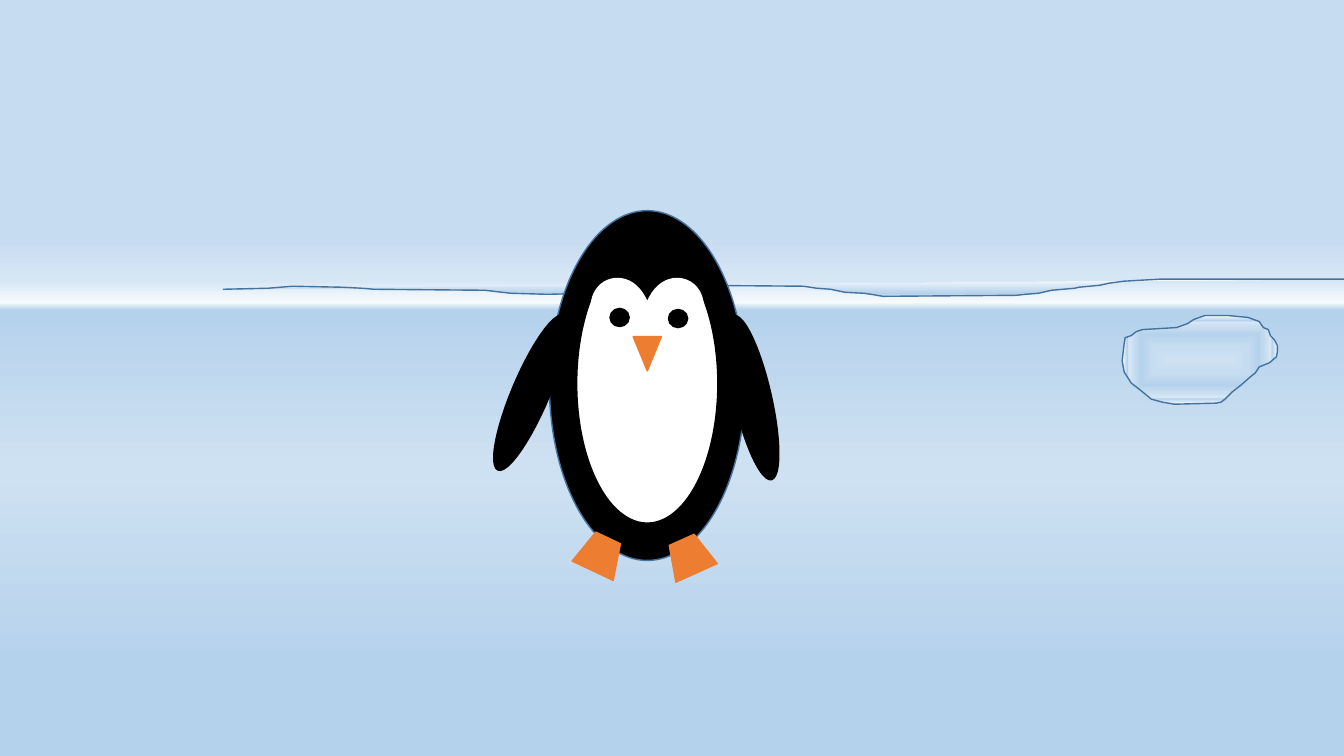
from lxml.etree import SubElement as Sub
from pptx import Presentation
from pptx.dml.color import RGBColor as RGB
from pptx.enum.shapes import MSO_SHAPE as Shp
from pptx.oxml.ns import qn
from pptx.util import Pt

PX = 9144  # EMU in one px, 100 px to the inch
INK = {
    "black": "000000", "white": "FFFFFF", "orange": "ED7D31", "edge": "43739E",
    "snow": "F7FAFD", "mist": "D6E6F5", "pale": "CEE1F2", "sky": "C6DCF1",
    "ice": "B5D2EC",
}
SCENE = [(31, "sky"), (37, "mist"), (40, "snow"), (41, "ice"), (62, "pale"), (88, "ice")]
DRIFT = [(0, "snow"), (83, "ice"), (84, "ice"), (100, "pale")]
FLOE = [(0, "pale"), (31, "sky"), (57, "ice"), (85, "mist"), (88, "ice"), (100, "snow")]

RIDGE = [
    (221, 287), (266, 286), (290, 284), (340, 285), (359, 286), (371, 287),
    (481, 288), (498, 290), (507, 291), (543, 292), (585, 291), (595, 290),
    (614, 288), (626, 287), (641, 285), (664, 284), (678, 283), (797, 284),
    (810, 286), (824, 287), (838, 290), (857, 291), (864, 292), (876, 294),
    (1008, 293), (1017, 292), (1030, 291), (1043, 288), (1066, 286),
    (1070, 285), (1091, 283), (1100, 281), (1115, 279), (1132, 278),
    (1150, 277), (1342, 277),
]
BERG = [
    (1215, 396), (1211, 399), (1206, 400), (1165, 401), (1153, 399),
    (1142, 396), (1131, 387), (1122, 380), (1115, 369), (1113, 358),
    (1115, 341), (1116, 335), (1122, 333), (1127, 329), (1133, 327),
    (1167, 325), (1178, 321), (1184, 317), (1195, 313), (1218, 313),
    (1238, 315), (1249, 319), (1253, 325), (1258, 327), (1260, 333),
    (1264, 337), (1267, 343), (1267, 349), (1266, 354), (1259, 360),
    (1249, 364), (1245, 370), (1240, 374), (1231, 382), (1222, 389),
]


def tint(name):
    return RGB.from_string(INK[name])


def blend(fill, root, stops, shape=False):
    """Fill with several stops, running down or inward from the outline."""
    fill.gradient()
    fill.gradient_angle = 270
    grad = next(root.iter(qn("a:gradFill")))
    line = grad.find(qn("a:lin"))
    bag = grad.find(qn("a:gsLst"))
    for old in list(bag):
        bag.remove(old)
    for pos, name in stops:
        stop = Sub(bag, qn("a:gs"), pos=str(pos * 1000))
        Sub(stop, qn("a:srgbClr"), val=INK[name])
    if shape:
        grad.remove(line)
        way = Sub(grad, qn("a:path"), path="shape")
        Sub(way, qn("a:fillToRect"), {side: "50000" for side in "ltrb"})


def trim(shape, edge):
    shape.shadow.inherit = False
    shape.line.color.rgb = tint(edge)
    shape.line.width = Pt(1)


def add_part(slide, kind, box, ink, edge=None, turn=0):
    part = slide.shapes.add_shape(kind, *(n * PX for n in box))
    part.fill.solid()
    part.fill.fore_color.rgb = tint(ink)
    part.rotation = turn
    trim(part, edge or ink)


def add_ice(slide, points, stops, closed=False):
    pen = slide.shapes.build_freeform(*points[0], scale=PX)
    pen.add_line_segments(points[1:], close=closed)
    ice = pen.convert_to_shape()
    blend(ice.fill, ice.element.spPr, stops, shape=closed)
    trim(ice, "edge")


def add_bird(slide):
    oval, foot = Shp.OVAL, Shp.TRAPEZOID
    add_part(slide, oval, (545, 209, 194, 347), "black", "edge")
    add_part(slide, oval, (572, 242, 140, 277), "white", "black")
    add_part(slide, oval, (585, 235, 113, 91), "black")
    add_part(slide, Shp.HEART, (587, 275, 110, 101), "white")
    add_part(slide, Shp.ISOSCELES_TRIANGLE, (628, 334, 28, 34), "orange", turn=180)
    for x, y, turn in ((573, 532, 25.3), (661, 534, 335.8)):
        add_part(slide, foot, (x, y, 45, 36), "orange", turn=turn)
    for x, y, turn in ((508, 306, 23), (728, 311, 347.1)):
        add_part(slide, oval, (x, y, 37, 167), "black", turn=turn)
    for x, y in ((605, 306), (663, 307)):
        add_part(slide, oval, (x, y, 19, 18), "black")


def main():
    deck = Presentation()
    deck.slide_width, deck.slide_height = 1333 * PX, 750 * PX
    slide = deck.slides.add_slide(deck.slide_layouts[6])
    blend(slide.background.fill, slide.element, SCENE)
    add_ice(slide, RIDGE, DRIFT)
    add_bird(slide)
    add_ice(slide, BERG, FLOE, closed=True)
    deck.save("out.pptx")


if __name__ == "__main__":
    main()
